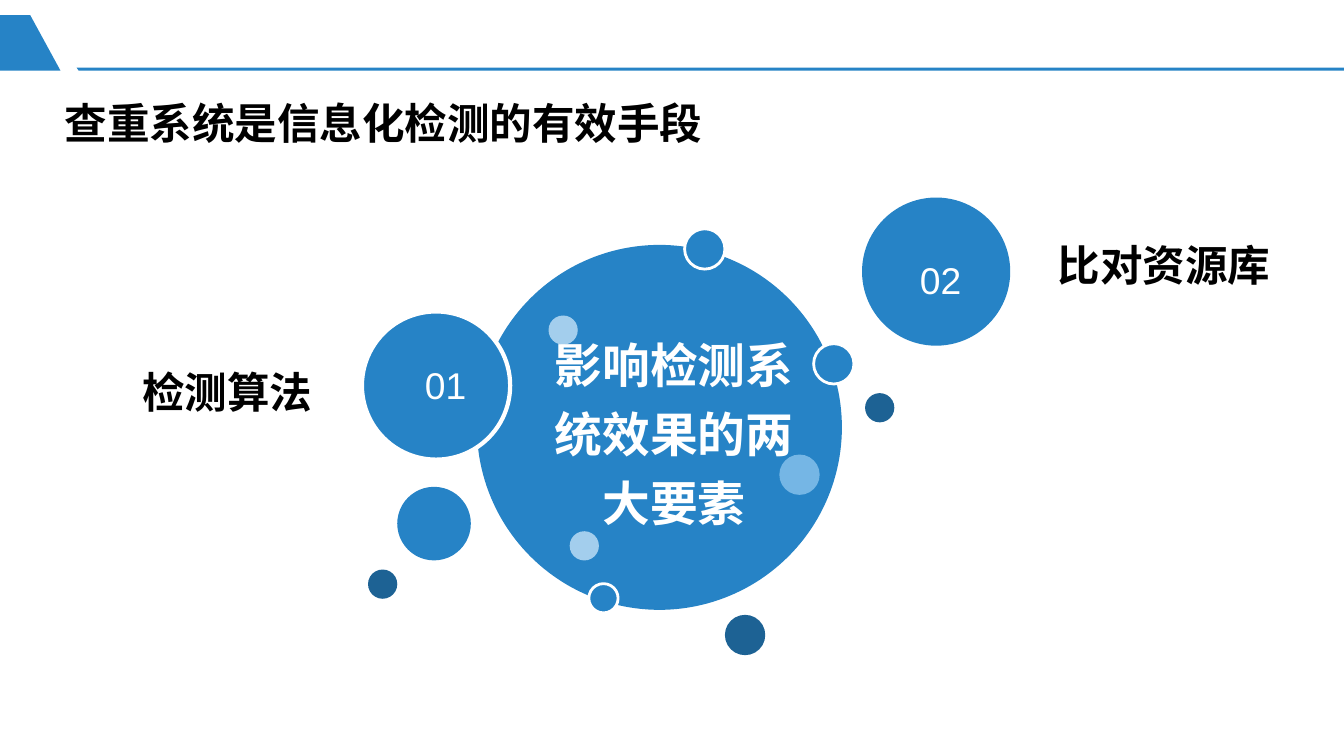
from pptx import Presentation
from pptx.dml.color import RGBColor
from pptx.enum.shapes import MSO_SHAPE as Shape
from pptx.enum.text import MSO_ANCHOR as Anchor, PP_ALIGN as Align
from pptx.util import Inches, Pt

BLUE, DARK, SKY, PALE = "2683C6", "1D6294", "75B6E5", "A3CEED"
WHITE, BLACK = "FFFFFF", "000000"
SMALL, MID = 0.29, 0.4

# left, top, diameter, fill, width of the white rim
CIRCLES = [
    (4.73, 2.43, 3.62, BLUE, 0),
    (6.79, 2.27, MID, BLUE, 2),
    (5.84, 5.79, SMALL, BLUE, 2),
    (8.58, 3.9, SMALL, DARK, 0),
    (7.19, 6.1, MID, DARK, 0),
    (5.44, 3.13, SMALL, PALE, 0),
    (3.59, 3.09, 1.47, BLUE, 3),
    (7.73, 4.51, MID, SKY, 0),
    (3.94, 4.83, 0.73, BLUE, 0),
    (8.55, 1.96, 1.47, BLUE, 0),
    (8.07, 3.41, MID, BLUE, 2),
    (3.65, 5.65, SMALL, DARK, 0),
    (5.65, 5.27, SMALL, PALE, 0),
]


def color(code):
    return RGBColor.from_string(code)


def paint(shape, fill, rim=0):
    shape.shadow.inherit = False
    shape.fill.solid()
    shape.fill.fore_color.rgb = color(fill)
    if rim:
        shape.line.color.rgb = color(WHITE)
        shape.line.width = Pt(rim)
    else:
        shape.line.fill.background()


def circle(slide, left, top, size, fill, rim):
    shape = slide.shapes.add_shape(
        Shape.OVAL, Inches(left), Inches(top), Inches(size), Inches(size))
    paint(shape, fill, rim)


def outline(slide, points):
    first, *rest = [(Inches(x), Inches(y)) for x, y in points]
    form = slide.shapes.build_freeform(*first)
    form.add_line_segments(rest)
    paint(form.convert_to_shape(), BLUE)


def label(slide, box, text, size, ink=BLACK, bold=True, align=Align.JUSTIFY,
          anchor=Anchor.TOP, spacing=1.2):
    frame = slide.shapes.add_textbox(*map(Inches, box)).text_frame
    frame.word_wrap = True
    frame.vertical_anchor = anchor
    frame.margin_left = frame.margin_right = 0
    frame.margin_top = frame.margin_bottom = 0
    para = frame.paragraphs[0]
    para.alignment = align
    para.line_spacing = spacing
    run = para.add_run()
    run.text = text
    font = run.font
    font.name = "Arial"
    font.size = Pt(size)
    font.bold = bold
    font.color.rgb = color(ink)


def main():
    deck = Presentation()
    deck.slide_width, deck.slide_height = Inches(13.33), Inches(7.5)
    slide = deck.slides.add_slide(deck.slide_layouts[6])

    for spot in CIRCLES:
        circle(slide, *spot)

    label(slide, (5.44, 3.21, 2.49, 2.07), "影响检测系统效果的两大要素", 34.1,
          WHITE, align=Align.CENTER, anchor=Anchor.MIDDLE)
    for left, top, number in [(9.02, 2.46, "02"), (4.11, 3.51, "01")]:
        label(slide, (left, top, 0.62, 0.54), number, 26.6, WHITE,
              bold=False, align=Align.CENTER)
    label(slide, (1.41, 3.53, 2.11, 0.61), "检测算法", 30.4)
    label(slide, (10.49, 2.27, 2.84, 0.61), "比对资源库", 30.4)

    outline(slide, [(0.76, 0.67), (13.33, 0.67), (13.33, 0.7), (0.78, 0.7)])
    outline(slide, [(0.3, 0.15), (0.6, 0.7), (0, 0.7), (0, 0.15)])
    label(slide, (0.64, 0.96, 8.23, 0.51), "查重系统是信息化检测的有效手段", 30.4,
          align=Align.LEFT, spacing=1.0)

    deck.save("out.pptx")


if __name__ == "__main__":
    main()
